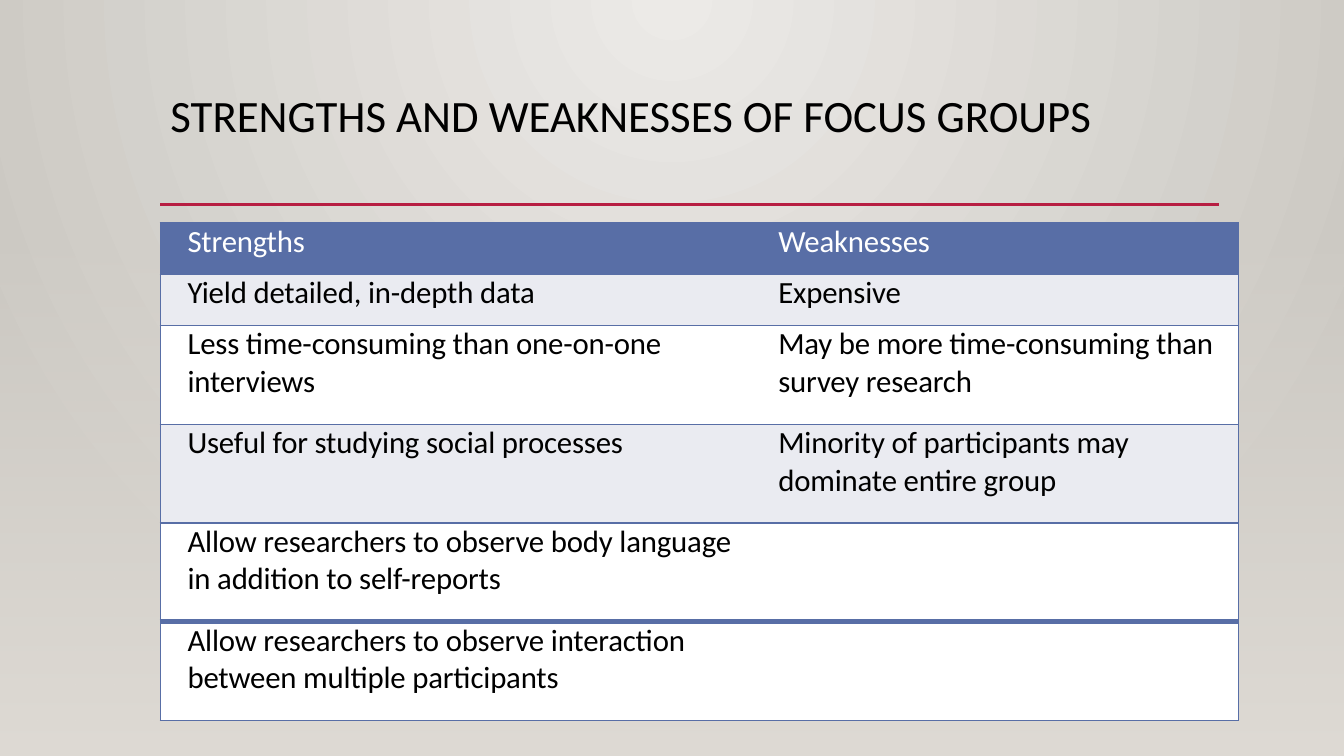
from lxml.etree import SubElement
from pptx import Presentation
from pptx.dml.color import RGBColor
from pptx.enum.shapes import MSO_CONNECTOR, MSO_SHAPE
from pptx.enum.text import MSO_ANCHOR, PP_ALIGN
from pptx.oxml.ns import qn
from pptx.util import Emu, Pt

PX = 9144  # 100 px to the inch
WIDTH, HEIGHT = 1333, 750
LEFT, RULE_Y, TABLE_TOP = 159, 203, 221
COLUMN_WIDTHS = [586, 483]
ROW_HEIGHTS = [51, 51, 98, 98, 98, 98]
ROWS = [
    ("Strengths", "Weaknesses"),
    ("Yield detailed, in-depth data", "Expensive"),
    ("Less time-consuming than one-on-one interviews",
     "May be more time-consuming than survey research"),
    ("Useful for studying social processes",
     "Minority of participants may dominate entire group"),
    ("Allow researchers to observe body language in addition to self-reports", ""),
    ("Allow researchers to observe interaction between multiple participants", ""),
]
BLUE, BAND, WHITE, BLACK = "586EA6", "EAEBF1", "FFFFFF", "000000"
ROW_FILLS = [BLUE, BAND, WHITE, BAND, WHITE, WHITE]


def px(length):
    return Emu(length * PX)


def color(hex_string):
    return RGBColor.from_string(hex_string)


def set_all(target, values):
    for name, value in values.items():
        setattr(target, name, value)


class SlideBuilder:
    font_name = "Calibri"

    def __init__(self, slide):
        self.slide = slide

    def gradient(self, fill, start, end):
        fill.gradient()
        for stop, hex_string in zip(fill.gradient_stops, (start, end)):
            stop.color.rgb = color(hex_string)

    def background(self, start, end):
        """Fill the background with a glow centred on the top edge."""
        self.gradient(self.slide.background.fill, start, end)
        linear = self.slide.background._cSld.find(".//" + qn("a:lin"))
        gradient = linear.getparent()
        gradient.remove(linear)
        glow = SubElement(gradient, qn("a:path"), {"path": "circle"})
        SubElement(glow, qn("a:fillToRect"),
                   {"l": "43000", "t": "0", "r": "43000", "b": "100000"})

    def fade(self, left, top, width, height, hex_string):
        """Add a rectangle that goes from clear at the top to solid below."""
        shape = self.slide.shapes.add_shape(
            MSO_SHAPE.RECTANGLE, px(left), px(top), px(width), px(height))
        shape.shadow.inherit = False
        shape.line.fill.background()
        self.gradient(shape.fill, hex_string, hex_string)
        shape.fill.gradient_angle = 270
        first_color = shape._element.spPr.find(".//" + qn("a:srgbClr"))
        SubElement(first_color, qn("a:alpha"), {"val": "0"})

    def format_text(self, paragraph, size, hex_string):
        paragraph.alignment = PP_ALIGN.LEFT
        for run in paragraph.runs:
            set_all(run.font, {"name": self.font_name, "size": Pt(size), "bold": False})
            run.font.color.rgb = color(hex_string)

    def title(self, text, left, top, width, height):
        title = self.slide.shapes.title
        set_all(title, {"left": px(left), "top": px(top),
                        "width": px(width), "height": px(height)})
        title.text_frame.text = text
        title.text_frame.vertical_anchor = MSO_ANCHOR.TOP
        paragraph = title.text_frame.paragraphs[0]
        paragraph.line_spacing = 0.9
        self.format_text(paragraph, 32, BLACK)

    def rule(self, left, top, width, hex_string):
        line = self.slide.shapes.add_connector(
            MSO_CONNECTOR.STRAIGHT, px(left), px(top), px(left + width), px(top))
        line.line.color.rgb = color(hex_string)
        line.line.width = Pt(2.5)
        SubElement(line._element.spPr, qn("a:effectLst"))

    def borders(self, cell, widths):
        """Draw left, right, top and bottom borders; a width of 0 hides one."""
        properties = cell._tc.get_or_add_tcPr()
        for side, width in zip("LRTB", widths):
            line = SubElement(properties, qn("a:ln" + side), {"w": str(Pt(width))})
            if width:
                fill = SubElement(line, qn("a:solidFill"))
                SubElement(fill, qn("a:srgbClr"), {"val": BLUE})
            else:
                SubElement(line, qn("a:noFill"))

    def cell(self, cell, text, fill, text_color, border_widths):
        set_all(cell, {"margin_left": px(27), "margin_right": px(9),
                       "margin_top": 0, "margin_bottom": 0})
        self.borders(cell, border_widths)
        cell.fill.solid()
        cell.fill.fore_color.rgb = color(fill)
        if text:
            cell.text = text
            paragraph = cell.text_frame.paragraphs[0]
            self.format_text(paragraph, 22, text_color)
            for run in paragraph.runs:
                run._r.get_or_add_rPr().set("spc", "-10")

    def table(self, left, top):
        table = self.slide.shapes.add_table(
            len(ROWS), len(COLUMN_WIDTHS), px(left), px(top),
            px(sum(COLUMN_WIDTHS)), px(sum(ROW_HEIGHTS))).table
        table.horz_banding = False
        for column, width in zip(table.columns, COLUMN_WIDTHS):
            column.width = px(width)
        last = len(ROWS) - 1
        for i, (texts, height, fill) in enumerate(zip(ROWS, ROW_HEIGHTS, ROW_FILLS)):
            table.rows[i].height = px(height)
            above = 4 if i == last else 1
            below = 4 if i == last - 1 else 1
            for j, text in enumerate(texts):
                self.cell(table.cell(i, j), text, fill, WHITE if i == 0 else BLACK,
                          (int(j == 0), int(j == 1), above, below))


def main():
    presentation = Presentation()
    set_all(presentation, {"slide_width": px(WIDTH), "slide_height": px(HEIGHT)})
    builder = SlideBuilder(presentation.slides.add_slide(presentation.slide_layouts[5]))
    builder.background("ECEAE7", "CAC7C1")
    builder.fade(0, TABLE_TOP, WIDTH, HEIGHT - TABLE_TOP, "DFDBD5")
    builder.title("STRENGTHS AND WEAKNESSES OF FOCUS GROUPS", LEFT, 88, 1050, 115)
    builder.rule(LEFT, RULE_Y, 1050, "B71E42")
    builder.table(LEFT, TABLE_TOP)
    presentation.save("out.pptx")


if __name__ == "__main__":
    main()
